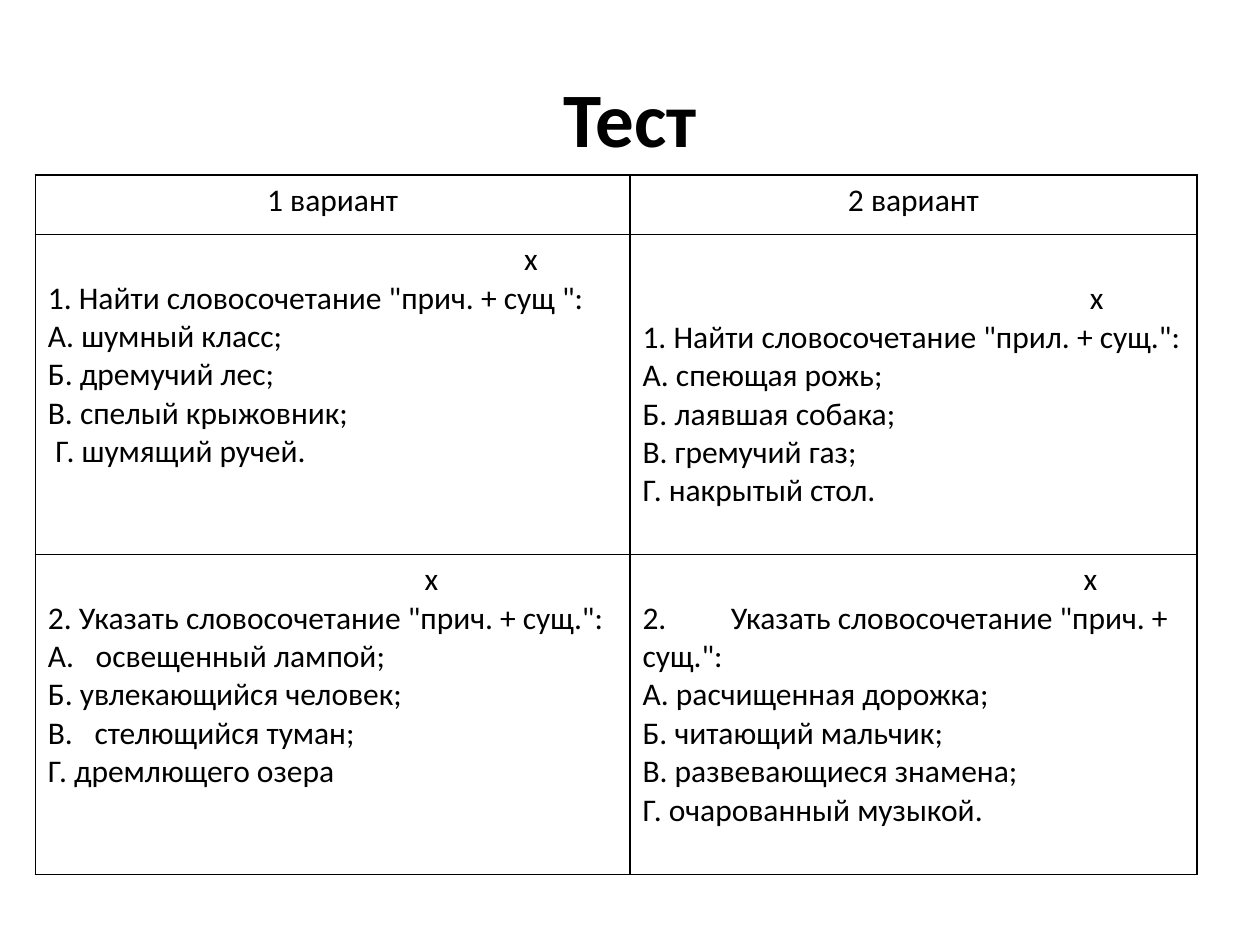
from dataclasses import dataclass

from lxml.etree import SubElement
from pptx import Presentation
from pptx.dml.color import RGBColor
from pptx.enum.text import MSO_ANCHOR, PP_ALIGN
from pptx.oxml.ns import qn
from pptx.util import Inches, Pt


@dataclass(frozen=True)
class Theme:
    font: str = "Calibri"
    ink: RGBColor = RGBColor(0, 0, 0)
    title_size: Pt = Pt(44)
    body_size: Pt = Pt(18)
    border: Pt = Pt(1)


theme = Theme()


def format_paragraph(paragraph, size, alignment, bold=False):
    paragraph.alignment = alignment
    font = paragraph.font
    font.name, font.size, font.bold = theme.font, size, bold
    font.color.rgb = theme.ink


def add_borders(cell):
    properties = cell._tc.get_or_add_tcPr()
    for position, side in enumerate(("a:lnL", "a:lnR", "a:lnT", "a:lnB")):
        line = properties.makeelement(qn(side), {"w": str(theme.border)})
        fill = SubElement(line, qn("a:solidFill"))
        SubElement(fill, qn("a:srgbClr"), val=str(theme.ink))
        properties.insert(position, line)


presentation = Presentation()
presentation.slide_width, presentation.slide_height = Inches(10), Inches(7.5)
slide = presentation.slides.add_slide(presentation.slide_layouts[5])

title = slide.shapes.title
title.left, title.top = Inches(0.5), Inches(0.3)
title.width, title.height = Inches(9), Inches(1.25)
title.text_frame.text = "Тест"
title.text_frame.vertical_anchor = MSO_ANCHOR.MIDDLE
format_paragraph(title.text_frame.paragraphs[0], theme.title_size, PP_ALIGN.CENTER, bold=True)

# Each line is (text, left indent, tab stop); "х" marks the main word below it.
headings = [[("1 вариант", 0, 0)], [("2 вариант", 0, 0)]]
first_question = [
    [
        ("х", 3.78, 0),
        ('1. Найти словосочетание "прич. + сущ ":', 0, 0),
        ("А. шумный класс;", 0, 0),
        ("Б. дремучий лес;", 0, 0),
        ("В. спелый крыжовник;", 0, 0),
        ("Г. шумящий ручей.", 0.06, 0),
    ],
    [
        ("х", 3.55, 0),
        ('1. Найти словосочетание "прил. + сущ.":', 0, 0),
        ("A. спеющая рожь;", 0, 0),
        ("Б. лаявшая собака;", 0, 0),
        ("B. гремучий газ;", 0, 0),
        ("Г. накрытый стол.", 0, 0),
    ],
]
second_question = [
    [
        ("х", 2.99, 0),
        ('2. Указать словосочетание "прич. + сущ.":', 0, 0),
        ("A.\tосвещенный лампой;", 0, 0.38),
        ("Б. увлекающийся человек;", 0, 0),
        ("B.\tстелющийся туман;", 0, 0.37),
        ("Г. дремлющего озера", 0, 0),
    ],
    [
        ("х", 3.5, 0),
        ('2.\tУказать словосочетание "прич. + сущ.":', 0, 0.7),
        ("A. расчищенная дорожка;", 0, 0),
        ("Б. читающий мальчик;", 0, 0),
        ("B. развевающиеся знамена;", 0, 0),
        ("Г. очарованный музыкой.", 0, 0),
    ],
]
rows = [headings, first_question, second_question]
column_widths = [4.72, 4.5]
row_heights = [0.47, 2.54, 2.54]

table = slide.shapes.add_table(
    len(rows), len(column_widths), Inches(0.28), Inches(1.39),
    Inches(sum(column_widths)), Inches(sum(row_heights)),
).table
table.first_row = table.horz_banding = False
for column, width in zip(table.columns, column_widths):
    column.width = Inches(width)
for row, height in zip(table.rows, row_heights):
    row.height = Inches(height)

for row_index, row_cells in enumerate(rows):
    alignment = PP_ALIGN.LEFT if row_index else PP_ALIGN.CENTER
    for column_index, lines in enumerate(row_cells):
        cell = table.cell(row_index, column_index)
        cell.fill.background()
        add_borders(cell)
        text_frame = cell.text_frame
        for line_index, (text, indent, tab_stop) in enumerate(lines):
            paragraph = text_frame.add_paragraph() if line_index else text_frame.paragraphs[0]
            paragraph.text = text
            properties = paragraph._p.get_or_add_pPr()
            if indent:
                properties.set("marL", str(Inches(indent)))
            if tab_stop:
                tabs = SubElement(properties, qn("a:tabLst"))
                SubElement(tabs, qn("a:tab"), pos=str(Inches(tab_stop)), algn="l")
            format_paragraph(paragraph, theme.body_size, alignment)

# The second variant's first question starts one line lower.
table.cell(1, 1).margin_top = Inches(0.36)

presentation.save("out.pptx")
